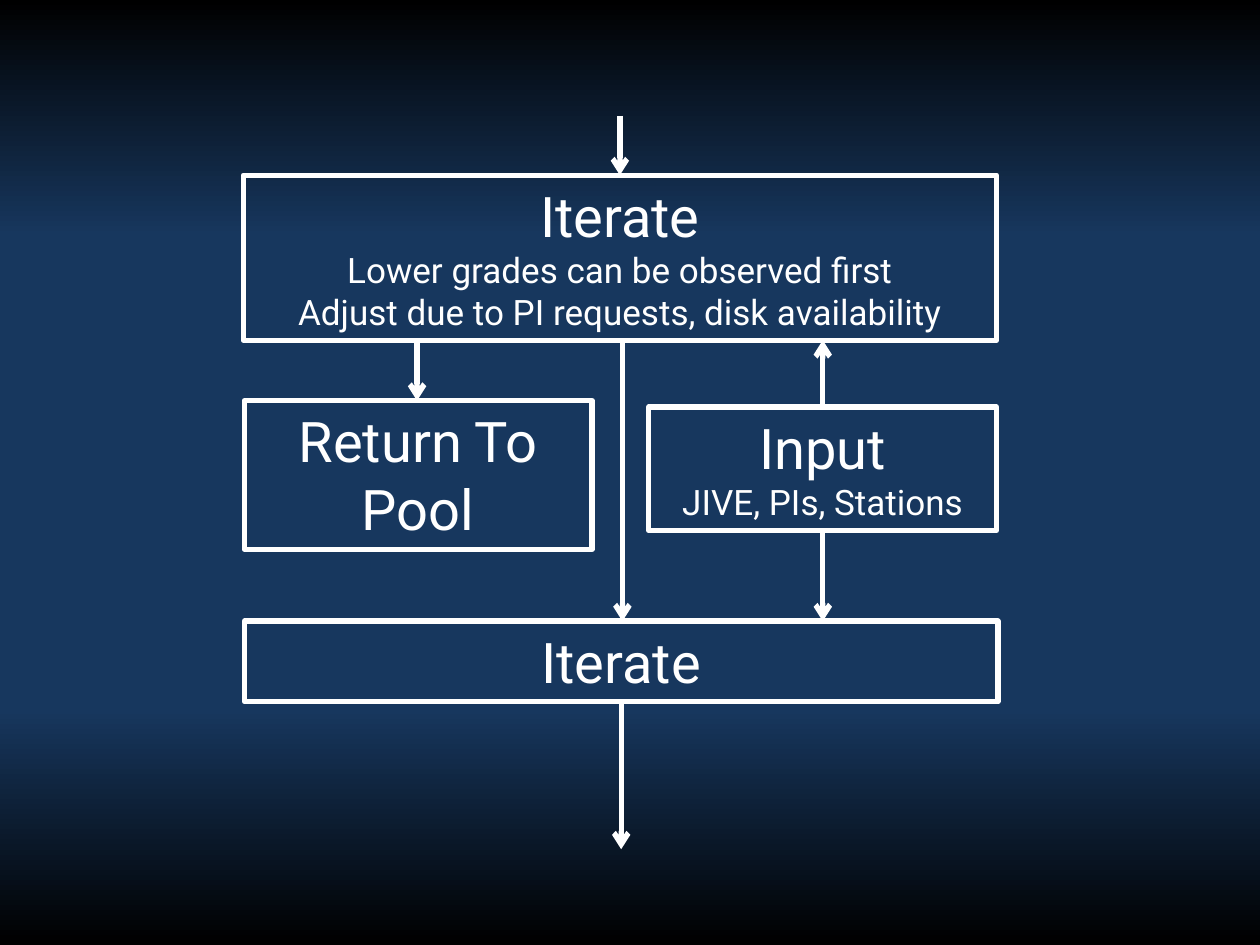
from copy import deepcopy

from lxml.etree import SubElement
from pptx import Presentation
from pptx.dml.color import RGBColor
from pptx.enum.shapes import MSO_CONNECTOR as Connector, MSO_SHAPE as Shape
from pptx.enum.text import MSO_ANCHOR as Anchor, PP_ALIGN as Align
from pptx.oxml.ns import qn
from pptx.util import Emu, Pt

EMU_PER_PX = 9144
COLOURS = {"white": "FFFFFF", "navy": "17375E", "black": "000000"}


def px(length):
    return Emu(length * EMU_PER_PX)


class FlowSlide:
    font_name = "Roboto"
    heading_size = Pt(32)
    detail_size = Pt(20)
    line_width = Pt(3)

    def __init__(self, slide):
        self.slide = slide

    def colour(self, name):
        return RGBColor.from_string(COLOURS[name])

    def outline(self, line):
        line.color.rgb = self.colour("white")
        line.width = self.line_width

    def background(self, stops):
        fill = self.slide.background.fill
        fill.gradient()
        fill.gradient_angle = 270
        stop_list = fill._fill._gradFill.find(qn("a:gsLst"))
        while len(stop_list) < len(stops):
            stop_list.append(deepcopy(stop_list[-1]))
        for stop, (position, name) in zip(fill.gradient_stops, stops):
            stop.position = position
            stop.color.rgb = self.colour(name)

    def box(self, left, top, width, height, heading, *details):
        shape = self.slide.shapes.add_shape(
            Shape.RECTANGLE, px(left), px(top), px(width), px(height))
        shape.shadow.inherit = False
        shape.fill.background()
        self.outline(shape.line)
        frame = shape.text_frame
        frame.word_wrap = True
        frame.vertical_anchor = Anchor.TOP
        frame.text = "\n".join((heading, *details))
        for index, paragraph in enumerate(frame.paragraphs):
            paragraph.alignment = Align.CENTER
            paragraph.font.name = self.font_name
            paragraph.font.size = self.detail_size if index else self.heading_size
            paragraph.font.color.rgb = self.colour("white")

    def arrow(self, x, start, end):
        connector = self.slide.shapes.add_connector(
            Connector.STRAIGHT, px(x), px(start), px(x), px(end))
        self.outline(connector.line)
        SubElement(connector.line._get_or_add_ln(), qn("a:tailEnd"), type="arrow")
        SubElement(connector._element.spPr, qn("a:effectLst"))


def main():
    presentation = Presentation()
    presentation.slide_width, presentation.slide_height = px(1000), px(750)
    blank_layout = presentation.slide_layouts[6]
    flow = FlowSlide(presentation.slides.add_slide(blank_layout))
    flow.background([(0, "black"), (0.25, "navy"), (0.75, "navy"), (1, "black")])

    flow.box(193, 139, 598, 131, "Iterate", "Lower grades can be observed first",
             "Adjust due to PI requests, disk availability")
    flow.box(194, 318, 276, 118, "Return To Pool")
    flow.box(515, 323, 276, 98, "Input", "JIVE, PIs, Stations")
    flow.box(194, 493, 598, 64, "Iterate")

    for x, start, end in [(492, 92, 139), (331, 270, 318), (653, 323, 270),
                          (494, 270, 493), (493, 557, 674), (653, 421, 493)]:
        flow.arrow(x, start, end)

    presentation.save("out.pptx")


if __name__ == "__main__":
    main()
